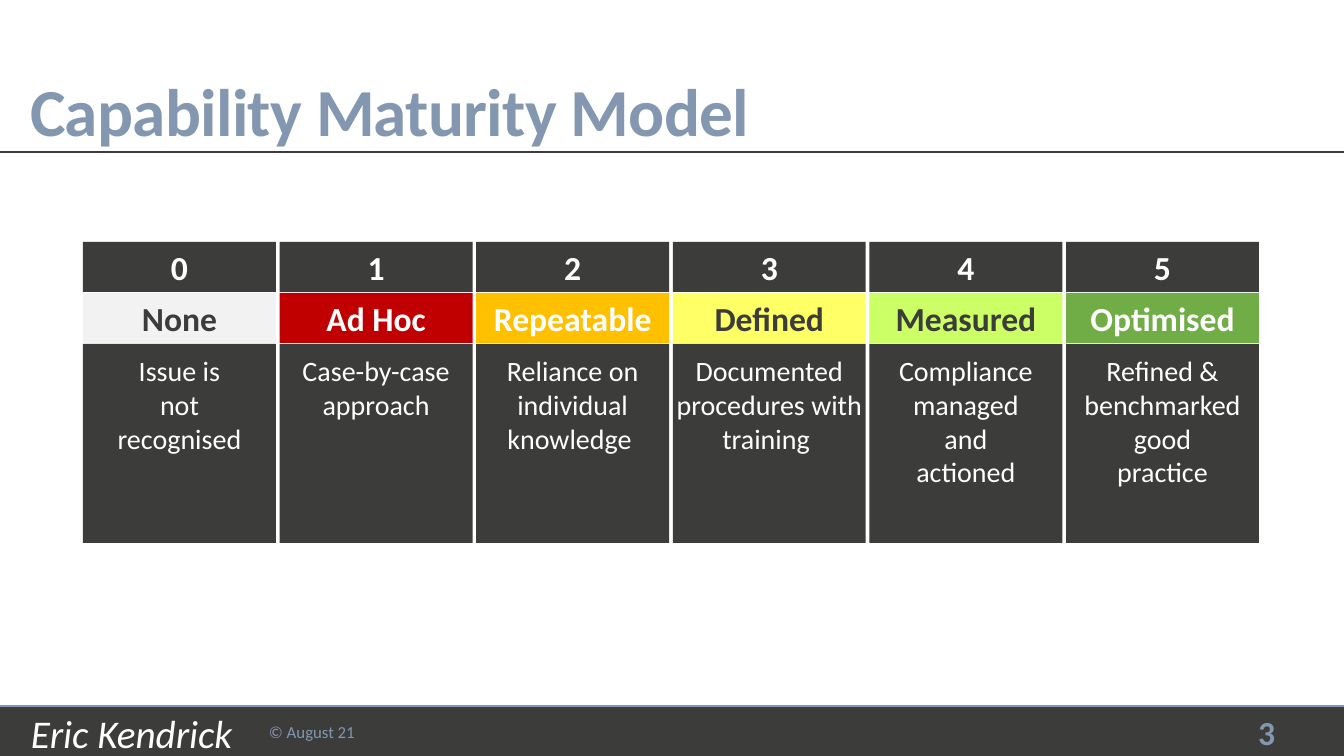
import dataclasses
import typing

import pptx
import pptx.dml.color
import pptx.enum.shapes
import pptx.enum.text
import pptx.util

WIDE, HIGH = 1344, 756
SCALE = 12192000 / WIDE
FONT = "Calibri"
INK = {
    "dark": "3C3C3B", "steel": "8497B0", "white": "FFFFFF", "pale": "F2F2F2",
    "red": "C00000", "amber": "FFC000", "yellow": "FFFF66", "lime": "CCFF66",
    "green": "70AD47",
}
ALIGN = pptx.enum.text.PP_ALIGN
ANCHOR = pptx.enum.text.MSO_ANCHOR

LEFT, RIGHT, WIDTH = 83, 1259, 193
TOPS = (242, 293, 344)
HEAD, BODY = 50, 199


@dataclasses.dataclass(frozen=True)
class Style:
    size: int
    ink: str = "white"
    bold: bool = False
    slant: bool = False
    align: typing.Any = ALIGN.LEFT
    anchor: typing.Any = ANCHOR.MIDDLE
    inset: tuple[int, int, int, int] = (10, 0, 10, 0)


@dataclasses.dataclass(frozen=True)
class Label:
    text: str
    box: tuple[int, int, int, int]
    style: Style


@dataclasses.dataclass(frozen=True)
class Level:
    name: str
    fill: str
    ink: str
    note: str


LEVELS = (
    Level("None", "pale", "dark", "Issue is\nnot\nrecognised"),
    Level("Ad Hoc", "red", "white", "Case-by-case approach"),
    Level("Repeatable", "amber", "white", "Reliance on individual knowledge "),
    Level("Defined", "yellow", "dark", "Documented procedures with training "),
    Level("Measured", "lime", "dark", "Compliance managed\nand\vactioned"),
    Level("Optimised", "green", "white", "Refined & benchmarked good\vpractice"),
)
TITLE = Label("Capability Maturity Model", (0, 0, WIDE, 155),
              Style(48, "steel", True, anchor=ANCHOR.BOTTOM, inset=(30, 5, 10, 5)))
FOOTER = (
    Label("Eric Kendrick", (21, 711, 241, 44), Style(28, slant=True)),
    Label("© August 21", (259, 712, 144, 40), Style(12, "steel", inset=(10, 5, 10, 5))),
    Label("3", (1092, 708, 193, 48), Style(24, "steel", True, align=ALIGN.RIGHT)),
)
NOTE = Style(20, align=ALIGN.CENTER, anchor=ANCHOR.TOP, inset=(0, 10, 0, 5))


def px(size: float) -> int:
    return round(size * SCALE)


def tint(name: str) -> pptx.dml.color.RGBColor:
    return pptx.dml.color.RGBColor.from_string(INK[name])


def write(shape: typing.Any, text: str, style: Style) -> None:
    frame = shape.text_frame
    frame.word_wrap = True
    frame.vertical_anchor = style.anchor
    (frame.margin_left, frame.margin_top,
     frame.margin_right, frame.margin_bottom) = map(px, style.inset)
    frame.text = text
    for para in frame.paragraphs:
        para.alignment = style.align
        for run in para.runs:
            font = run.font
            font.name, font.size = FONT, pptx.util.Pt(style.size)
            font.bold, font.italic = style.bold, style.slant
            font.color.rgb = tint(style.ink)


def block(shapes: typing.Any, box: tuple[float, ...], fill: str) -> typing.Any:
    """Add a plain filled rectangle."""
    kind = pptx.enum.shapes.MSO_SHAPE.RECTANGLE
    shape = shapes.add_shape(kind, *map(px, box))
    shape.shadow.inherit = False
    shape.fill.solid()
    shape.fill.fore_color.rgb = tint(fill)
    shape.line.fill.background()
    return shape


def rule(shapes: typing.Any, top: int, ink: str) -> None:
    """Add a line across the whole slide."""
    kind = pptx.enum.shapes.MSO_CONNECTOR.STRAIGHT
    line = shapes.add_connector(kind, 0, px(top), px(WIDE), px(top))
    line.line.color.rgb = tint(ink)
    line.line.width = pptx.util.Pt(2)
    props = line._element.spPr
    props.append(pptx.oxml.parse_xml(
        '<a:effectLst xmlns:a="http://schemas.openxmlformats.org/drawingml/2006/main"/>'))


def label(shapes: typing.Any, item: Label) -> typing.Any:
    shape = shapes.add_textbox(*map(px, item.box))
    write(shape, item.text, item.style)
    return shape


def stack(shapes: typing.Any, rank: int, level: Level) -> None:
    """Add one column: number, name and note."""
    group = shapes.add_group_shape().shapes
    left = LEFT + rank * (RIGHT - LEFT - WIDTH) / (len(LEVELS) - 1)
    head = Style(24, "white", True, align=ALIGN.CENTER, inset=(0, 5, 0, 5))
    name = dataclasses.replace(head, ink=level.ink)
    rows = (
        (str(rank), HEAD, "dark", head),
        (level.name, HEAD, level.fill, name),
        (level.note, BODY, "dark", NOTE),
    )
    for top, (text, high, fill, style) in zip(TOPS, rows):
        write(block(group, (left, top, WIDTH, high), fill), text, style)


def main() -> None:
    deck = pptx.Presentation()
    deck.slide_width, deck.slide_height = px(WIDE), px(HIGH)
    shapes = deck.slides.add_slide(deck.slide_layouts[6]).shapes

    block(shapes, (0, 706, WIDE, 50), "dark")
    rule(shapes, 152, "dark")
    rule(shapes, 706, "steel")

    title = label(shapes, TITLE).text_frame.paragraphs[0]
    title.line_spacing = 0.85
    title.runs[0].font._element.set("spc", "-50")
    for item in FOOTER:
        label(shapes, item)

    for rank, level in enumerate(LEVELS):
        stack(shapes, rank, level)
    deck.save("out.pptx")


if __name__ == "__main__":
    main()
